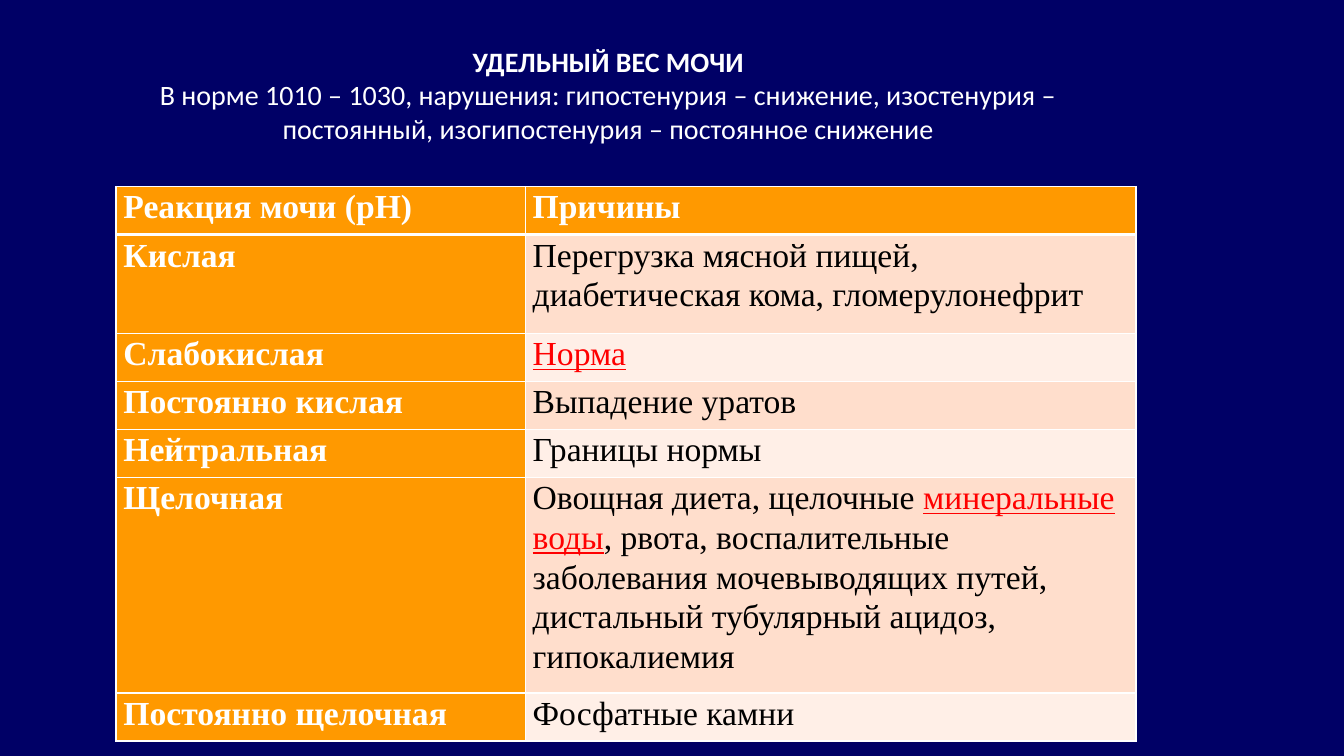
from dataclasses import dataclass

from lxml import etree
from pptx import Presentation
from pptx.dml.color import RGBColor
from pptx.enum import text
from pptx.oxml import ns
from pptx.util import Pt


@dataclass(frozen=True)
class Theme:
    back: str = "000066"
    light: str = "FFFFFF"
    dark: str = "000000"
    accent: str = "FF0000"
    label: str = "FF9900"
    bands: tuple = ("FFDECC", "FFEFE7")
    title_font: str = "Calibri"
    table_font: str = "Times New Roman"
    title_size: float = 20
    table_size: float = 24


THEME = Theme()
TITLE = "УДЕЛЬНЫЙ ВЕС МОЧИ"
NORM = ("В норме 1010 – 1030, нарушения: гипостенурия – снижение, изостенурия – "
        "постоянный, изогипостенурия – постоянное снижение")
LABEL_SHARE = 0.4012
ROWS = [
    (34.3, "Реакция мочи (рН)", [("Причины", False)]),
    (70.5, "Кислая", [("Перегрузка мясной пищей, диабетическая кома, гломерулонефрит", False)]),
    (34.3, "Слабокислая", [("Норма", True)]),
    (34.3, "Постоянно кислая", [("Выпадение уратов", False)]),
    (34.3, "Нейтральная", [("Границы нормы", False)]),
    (142, "Щелочная", [
        ("Овощная диета, щелочные ", False),
        ("минеральные воды", True),
        (", рвота, воспалительные заболевания мочевыводящих путей, "
         "дистальный тубулярный ацидоз, гипокалиемия", False)]),
    (34.3, "Постоянно щелочная", [("Фосфатные камни", False)]),
]


def rgb(value):
    return RGBColor.from_string(value)


def set_font(font, name, size, color, bold=None):
    font.name, font.size, font.bold = name, Pt(size), bold
    font.color.rgb = rgb(color)


def add_title(s, x, y, w, h):
    tf = s.shapes.add_textbox(Pt(x), Pt(y), Pt(w), Pt(h)).text_frame
    tf.word_wrap = True
    tf.vertical_anchor = text.MSO_ANCHOR.MIDDLE
    tf.margin_bottom = Pt(34)
    p = tf.paragraphs[0]
    p.alignment = text.PP_ALIGN.CENTER
    set_font(p.font, THEME.title_font, THEME.title_size, THEME.light)
    r = p.add_run()
    r.text, r.font.bold = TITLE, True
    p.add_line_break()
    p.add_run().text = NORM


def set_borders(cell, widths):
    tc_pr = cell._tc.get_or_add_tcPr()
    for i, (side, width) in enumerate(zip("LRTB", widths)):
        ln = etree.Element(ns.qn(f"a:ln{side}"), w=str(Pt(width)))
        fill = etree.SubElement(ln, ns.qn("a:solidFill"))
        etree.SubElement(fill, ns.qn("a:srgbClr"), val=THEME.light)
        tc_pr.insert(i, ln)


def fill_cell(cell, parts, fill, color, bold, widths):
    cell.margin_left = cell.margin_right = Pt(5.4)
    cell.margin_top = cell.margin_bottom = 0
    cell.fill.solid()
    cell.fill.fore_color.rgb = rgb(fill)
    set_borders(cell, widths)
    p = cell.text_frame.paragraphs[0]
    p.line_spacing = 1.07
    set_font(p.font, THEME.table_font, THEME.table_size, color, bold)
    for words, marked in parts:
        r = p.add_run()
        r.text = words
        if marked:
            r.font.underline = True
            r.font.color.rgb = rgb(THEME.accent)


def add_reaction_table(s, x, y, w, h):
    table = s.shapes.add_table(len(ROWS), 2, Pt(x), Pt(y), Pt(w), Pt(h)).table
    for column, share in zip(table.columns, (LABEL_SHARE, 1 - LABEL_SHARE)):
        column.width = Pt(w * share)
    total = sum(height for height, _, _ in ROWS)
    for i, (height, label, causes) in enumerate(ROWS):
        table.rows[i].height = Pt(h * height / total)
        header = i == 0
        widths = (1, 1, 3 if i == 1 else 1, 3 if header else 1)
        fill = THEME.label if header else THEME.bands[(i - 1) % 2]
        color = THEME.light if header else THEME.dark
        fill_cell(table.cell(i, 0), [(label, False)], THEME.label, THEME.light, True, widths)
        fill_cell(table.cell(i, 1), causes, fill, color, header, widths)


def main():
    prs = Presentation()
    prs.slide_width, prs.slide_height = Pt(960), Pt(540)
    s = prs.slides.add_slide(prs.slide_layouts[6])
    s.background.fill.solid()
    s.background.fill.fore_color.rgb = rgb(THEME.back)
    add_title(s, 82.8, 48.2, 703.4, 69.1)
    add_reaction_table(s, 82.8, 133.2, 728.6, 384)
    prs.save("out.pptx")


if __name__ == "__main__":
    main()
